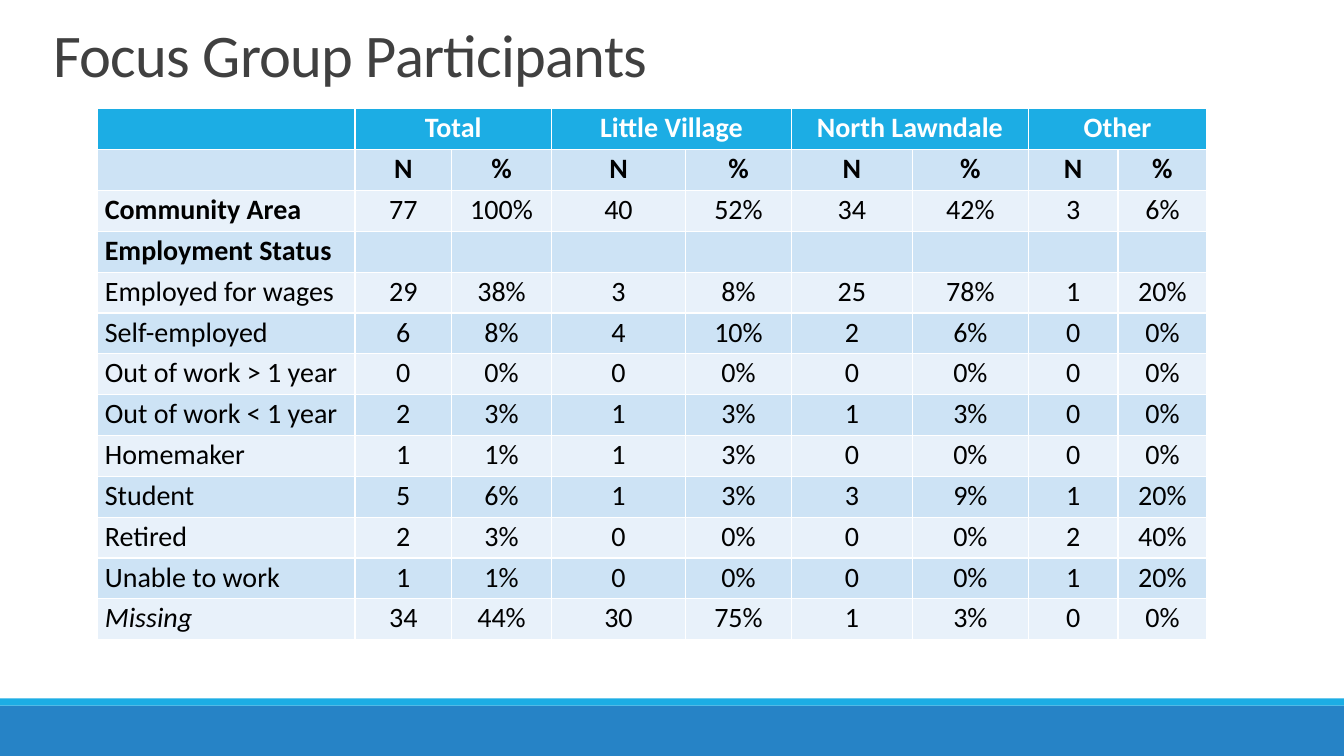
from pptx import Presentation
from pptx.dml.color import RGBColor
from pptx.enum.shapes import MSO_SHAPE
from pptx.enum.text import MSO_ANCHOR, MSO_AUTO_SIZE, PP_ALIGN
from pptx.util import Inches, Pt

RECTANGLE = MSO_SHAPE.RECTANGLE
BOTTOM = MSO_ANCHOR.BOTTOM
NO_AUTOFIT = MSO_AUTO_SIZE.NONE
LEFT, CENTER = PP_ALIGN.LEFT, PP_ALIGN.CENTER

FONT = "Calibri"
WHITE = RGBColor(0xFF, 0xFF, 0xFF)
BLACK = RGBColor(0x00, 0x00, 0x00)
GRAY = RGBColor(0x40, 0x40, 0x40)
CYAN = RGBColor(0x1C, 0xAD, 0xE4)
BLUE = RGBColor(0x26, 0x83, 0xC6)
DARK_BAND = RGBColor(0xCD, 0xE3, 0xF5)
LIGHT_BAND = RGBColor(0xE8, 0xF1, 0xFA)

COLUMN_WIDTHS = [2.55, 0.96, 0.99, 1.33, 1.05, 1.2, 1.15, 0.89, 0.88]
TABLE_HEIGHT = 5.27
AREAS = ["Total", "Little Village", "North Lawndale", "Other"]
ROWS = [
    ["", *(text for area in AREAS for text in (area, ""))],
    ["", *["N", "%"] * len(AREAS)],
    ["Community Area", "77", "100%", "40", "52%", "34", "42%", "3", "6%"],
    ["Employment Status", *[""] * 8],
    ["Employed for wages", "29", "38%", "3", "8%", "25", "78%", "1", "20%"],
    ["Self-employed", "6", "8%", "4", "10%", "2", "6%", "0", "0%"],
    ["Out of work > 1 year", "0", "0%", "0", "0%", "0", "0%", "0", "0%"],
    ["Out of work < 1 year", "2", "3%", "1", "3%", "1", "3%", "0", "0%"],
    ["Homemaker", "1", "1%", "1", "3%", "0", "0%", "0", "0%"],
    ["Student", "5", "6%", "1", "3%", "3", "9%", "1", "20%"],
    ["Retired", "2", "3%", "0", "0%", "0", "0%", "2", "40%"],
    ["Unable to work", "1", "1%", "0", "0%", "0", "0%", "1", "20%"],
    ["Missing", "34", "44%", "30", "75%", "1", "3%", "0", "0%"],
]
BOLD_LABELS = {"Community Area", "Employment Status"}


def add_span(para, text, size, color):
    span = para.add_run()
    span.text = text
    span.font.name = FONT
    span.font.size = Pt(size)
    span.font.color.rgb = color
    return span


deck = Presentation()
deck.slide_width = Inches(13.33)
deck.slide_height = Inches(7.5)
page = deck.slides.add_slide(deck.slide_layouts[5])

# Footer bars
for top, height, color in [(7, 0.5, BLUE), (6.93, 0.07, CYAN)]:
    bar = page.shapes.add_shape(RECTANGLE, 0, Inches(top), deck.slide_width, Inches(height))
    bar.shadow.inherit = False
    bar.fill.solid()
    bar.fill.fore_color.rgb = color
    bar.line.fill.background()

# Title
title = page.shapes.title
title.left, title.top = Inches(0.43), Inches(0.22)
title.width, title.height = Inches(12.55), Inches(0.72)
title.text_frame.auto_size = NO_AUTOFIT
title.text_frame.vertical_anchor = BOTTOM
para = title.text_frame.paragraphs[0]
para.alignment = LEFT
para.line_spacing = 0.85
span = add_span(para, "Focus Group Participants", 43.2, GRAY)
span.font._element.set("spc", "-50")

# Table: the default style supplies the white grid and the thick line under the header
table = page.shapes.add_table(
    len(ROWS), len(COLUMN_WIDTHS), Inches(0.97), Inches(1.08),
    Inches(sum(COLUMN_WIDTHS)), Inches(TABLE_HEIGHT),
).table
for column, width in zip(table.columns, COLUMN_WIDTHS):
    column.width = Inches(width)
for row in table.rows:
    row.height = Inches(TABLE_HEIGHT / len(ROWS))

for r, texts in enumerate(ROWS):
    band = CYAN if r == 0 else DARK_BAND if r % 2 else LIGHT_BAND
    for c, text in enumerate(texts):
        cell = table.cell(r, c)
        cell.fill.solid()
        cell.fill.fore_color.rgb = band
        cell.margin_left = cell.margin_right = Inches(0.07)
        cell.margin_top = cell.margin_bottom = 0
        if text:
            para = cell.text_frame.paragraphs[0]
            para.alignment = CENTER if c else LEFT
            para.line_spacing = 1.07
            span = add_span(para, text, 20, BLACK if r else WHITE)
            span.font.bold = r < 2 or text in BOLD_LABELS
            span.font.italic = text == "Missing"

for c in range(1, len(COLUMN_WIDTHS), 2):
    table.cell(0, c).merge(table.cell(0, c + 1))

deck.save("out.pptx")
